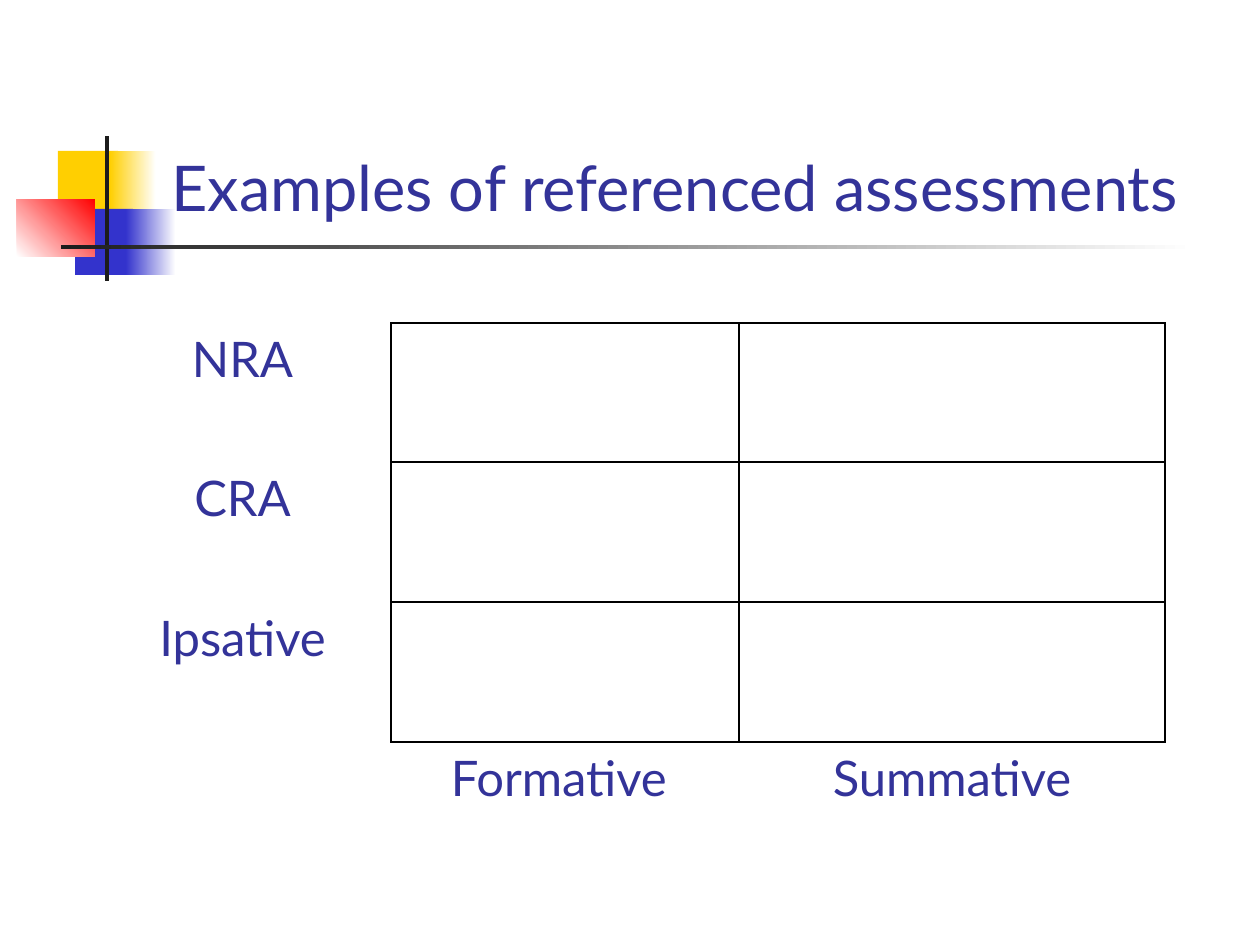
from lxml.etree import SubElement
from pptx import Presentation
from pptx.dml.color import RGBColor
from pptx.enum.shapes import MSO_SHAPE as Preset
from pptx.enum.text import MSO_ANCHOR as Anchor, PP_ALIGN as Align
from pptx.oxml.ns import qn
from pptx.util import Emu, Pt

COLOURS = {
    "yellow": "FFCF01", "blue": "3333CC", "red": "FF0000", "ink": "1C1C1C",
    "white": "FFFFFF", "text": "333399", "rule": "000000",
}
FONT = "Lato"
TITLE = "Examples of referenced assessments"
TITLE_BOX = (159, 29, 1074, 201)

# left, top, width, height, first colour, last colour (None when solid), angle
ORNAMENTS = [
    (58, 151, 60, 66, "yellow", None, 0),
    (110, 151, 46, 66, "yellow", "white", 0),
    (75, 209, 58, 66, "blue", None, 0),
    (126, 209, 50, 66, "blue", "white", 0),
    (17, 199, 78, 58, "white", "red", 45),
    (105, 136, 4, 145, "ink", None, 0),
    (61, 245, 1134, 4, "ink", "white", 0),
]

GRID = [
    ["NRA", "", ""],
    ["CRA", "", ""],
    ["Ipsative", "", ""],
    ["", "Formative ", "Summative"],
]
GRID_LEFT, GRID_TOP = 94, 323
COLUMN_WIDTHS = [297, 348, 426]
ROW_HEIGHTS = [139, 140, 140, 111]


def px(count):
    return Emu(round(count * 914400 / 126))


def rgb(name):
    return RGBColor.from_string(COLOURS[name])


def write(frame, words, size):
    para = frame.paragraphs[0]
    span = para.add_run()
    span.text = words
    span.font.name = FONT
    span.font.size = Pt(size)
    span.font.color.rgb = rgb("text")
    return para


def add_ornament(page, left, top, width, height, first, last, angle):
    block = page.shapes.add_shape(Preset.RECTANGLE, *map(px, (left, top, width, height)))
    block.shadow.inherit = False
    block.line.fill.background()
    if last is None:
        block.fill.solid()
        block.fill.fore_color.rgb = rgb(first)
        return
    block.fill.gradient()
    block.fill.gradient_angle = angle
    for stop, name, position in zip(block.fill.gradient_stops, (first, last), (0, 1)):
        stop.color.rgb = rgb(name)
        stop.position = position


def set_borders(cell, ruled_sides):
    """Rule the named sides and clear the others; call before filling the cell."""
    properties = cell._tc.get_or_add_tcPr()
    for side in "LRTB":
        line = SubElement(properties, qn(f"a:ln{side}"), w=str(Pt(1)))
        if side in ruled_sides:
            fill = SubElement(line, qn("a:solidFill"))
            SubElement(fill, qn("a:srgbClr"), val=COLOURS["rule"])
        else:
            SubElement(line, qn("a:noFill"))


def add_grid(page):
    frame = page.shapes.add_table(
        len(GRID), len(COLUMN_WIDTHS), px(GRID_LEFT), px(GRID_TOP),
        px(sum(COLUMN_WIDTHS)), px(sum(ROW_HEIGHTS)))
    table = frame.table
    table.first_row = table.horz_banding = False
    for column, width in zip(table.columns, COLUMN_WIDTHS):
        column.width = px(width)
    label_row = len(GRID) - 1
    for r, (row, height) in enumerate(zip(GRID, ROW_HEIGHTS)):
        table.rows[r].height = px(height)
        for c, words in enumerate(row):
            cell = table.cell(r, c)
            if r < label_row:
                set_borders(cell, "LRTB" if c else "R")
            else:
                set_borders(cell, "T" if c else "")
            cell.fill.background()
            if words:
                para = write(cell.text_frame, words, 28)
                para.alignment = Align.CENTER
                para.space_before = Pt(5.6)


def main():
    deck = Presentation()
    deck.slide_width, deck.slide_height = px(1260), px(945)
    page = deck.slides.add_slide(deck.slide_layouts[6])
    for ornament in ORNAMENTS:
        add_ornament(page, *ornament)
    title = page.shapes.add_textbox(*map(px, TITLE_BOX)).text_frame
    title.word_wrap = True
    title.vertical_anchor = Anchor.BOTTOM
    write(title, TITLE, 36)
    add_grid(page)
    deck.save("out.pptx")


if __name__ == "__main__":
    main()
